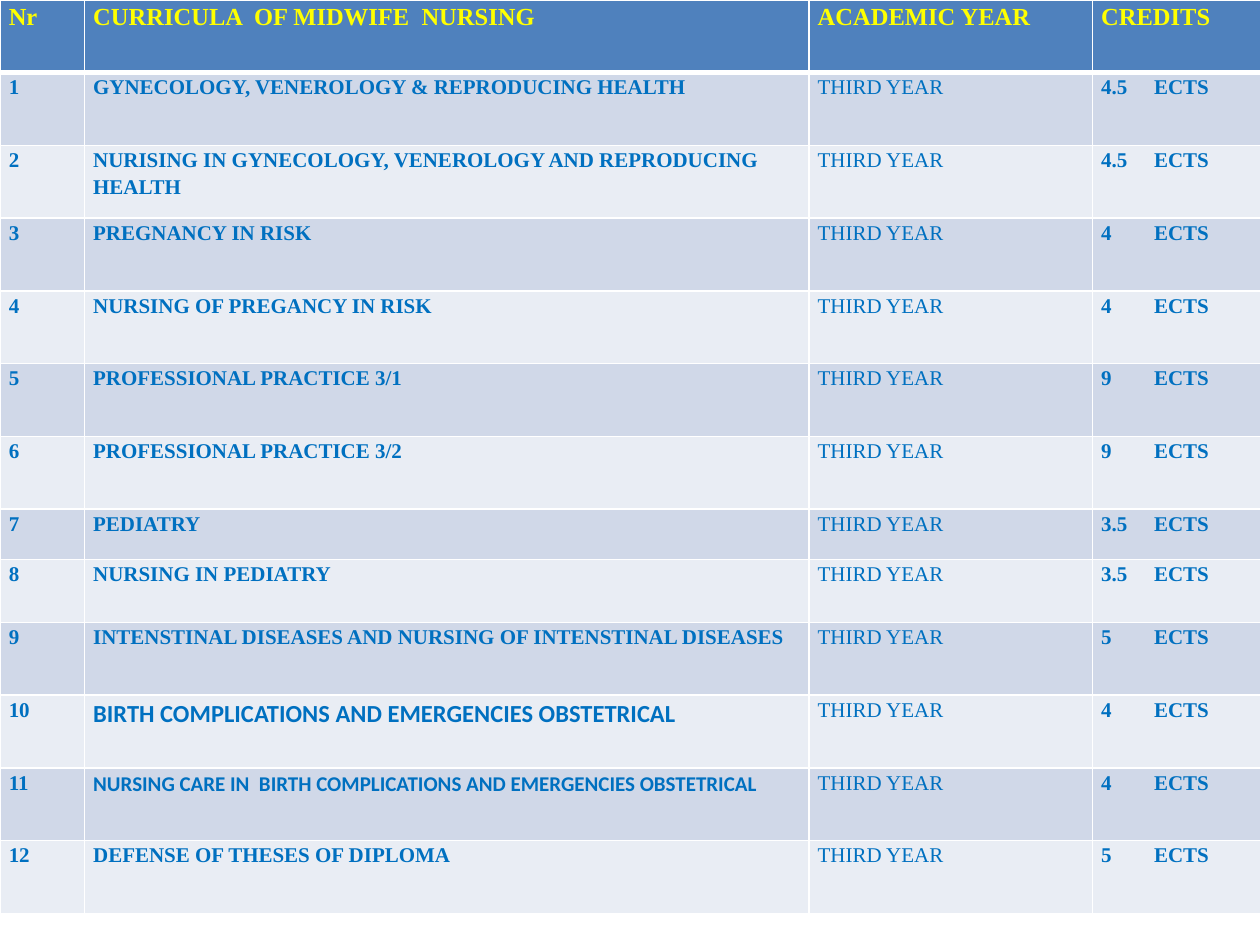
from lxml import etree
from pptx import Presentation
from pptx import util as u
from pptx.dml.color import RGBColor
from pptx.enum import text
from pptx.oxml import ns

COLORS = {
    "header": "4F81BD", "odd": "D0D8E8", "even": "E9EDF4",
    "heading": "FFFF00", "body": "0070C0", "border": "FFFFFF",
}
SERIF, SANS = "Times New Roman", "Calibri"
HEADINGS = ["Nr", "CURRICULA  OF MIDWIFE  NURSING", "ACADEMIC YEAR", "CREDITS"]
COURSES = [
    ("GYNECOLOGY, VENEROLOGY & REPRODUCING HEALTH", "4.5"),
    ("NURISING IN GYNECOLOGY, VENEROLOGY AND REPRODUCING HEALTH", "4.5"),
    ("PREGNANCY IN RISK", "4"),
    ("NURSING OF PREGANCY IN RISK", "4"),
    ("PROFESSIONAL PRACTICE 3/1", "9"),
    ("PROFESSIONAL PRACTICE 3/2", "9"),
    ("PEDIATRY", "3.5"),
    ("NURSING IN PEDIATRY", "3.5"),
    ("INTENSTINAL DISEASES AND NURSING OF INTENSTINAL DISEASES", "5"),
    ("BIRTH COMPLICATIONS AND EMERGENCIES OBSTETRICAL", "4"),
    ("NURSING CARE IN  BIRTH COMPLICATIONS AND EMERGENCIES OBSTETRICAL", "4"),
    ("DEFENSE OF THESES OF DIPLOMA", "5"),
]
COURSE_FONTS = {10: (SANS, 14), 11: (SANS, 12)}
COLUMN_WIDTHS = [0.67, 5.75, 2.25, 1.5]
TABLE_HEIGHT = 7.25
SHORT_ROWS = {7: 0.4, 8: 0.5}
COURSE_COLUMN, YEAR_COLUMN, CREDITS_COLUMN = 1, 2, 3
UNIT_TAB = 0.42


class CurriculumSlide:
    def __init__(self, deck):
        self.slide = deck.slides.add_slide(deck.slide_layouts[6])

    def table(self, rows, widths, heights):
        frame = self.slide.shapes.add_table(
            len(rows), len(widths), 0, 0,
            u.Inches(sum(widths)), u.Inches(sum(heights)))
        grid = frame.table
        for column, width in zip(grid.columns, widths):
            column.width = u.Inches(width)
        for row, height in zip(grid.rows, heights):
            row.height = u.Inches(height)
        for r, values in enumerate(rows):
            for c, value in enumerate(values):
                self.cell(grid.cell(r, c), r, c, value)

    def cell(self, cell, r, c, value):
        is_header = r == 0
        self.borders(cell, top=3 if r == 1 else 1, bottom=3 if is_header else 1)
        band = "header" if is_header else "odd" if r % 2 else "even"
        cell.fill.solid()
        cell.fill.fore_color.rgb = RGBColor.from_string(COLORS[band])
        cell.margin_left = cell.margin_right = u.Inches(0.07)
        cell.margin_top = cell.margin_bottom = 0
        cell.vertical_anchor = text.MSO_ANCHOR.TOP

        paragraph = cell.text_frame.paragraphs[0]
        paragraph.text = value
        paragraph.line_spacing = 1.15
        paragraph.alignment = text.PP_ALIGN.LEFT
        if c == CREDITS_COLUMN and not is_header:
            self.tab_stop(paragraph, UNIT_TAB)

        name, size = SERIF, 14 if is_header else 12
        if c == COURSE_COLUMN:
            name, size = COURSE_FONTS.get(r, (name, size))
        for run in paragraph.runs:
            run.font.name = name
            run.font.size = u.Pt(size)
            run.font.bold = is_header or c != YEAR_COLUMN
            run.font.color.rgb = RGBColor.from_string(
                COLORS["heading" if is_header else "body"])

    def borders(self, cell, top, bottom):
        properties = cell._tc.get_or_add_tcPr()
        for side, width in (("L", 1), ("R", 1), ("T", top), ("B", bottom)):
            line = etree.SubElement(
                properties, ns.qn(f"a:ln{side}"), w=str(u.Pt(width)))
            fill = etree.SubElement(line, ns.qn("a:solidFill"))
            etree.SubElement(fill, ns.qn("a:srgbClr"), val=COLORS["border"])

    def tab_stop(self, paragraph, position):
        stops = etree.SubElement(
            paragraph._p.get_or_add_pPr(), ns.qn("a:tabLst"))
        etree.SubElement(
            stops, ns.qn("a:tab"), pos=str(u.Inches(position)), algn="l")


def main():
    deck = Presentation()
    deck.slide_width, deck.slide_height = u.Inches(10), u.Inches(7.5)
    rows = [HEADINGS] + [
        [str(number), course, "THIRD YEAR", f"{credits}\tECTS"]
        for number, (course, credits) in enumerate(COURSES, 1)
    ]
    full_row = ((TABLE_HEIGHT - sum(SHORT_ROWS.values()))
                / (len(rows) - len(SHORT_ROWS)))
    heights = [SHORT_ROWS.get(r, full_row) for r in range(len(rows))]
    CurriculumSlide(deck).table(rows, COLUMN_WIDTHS, heights)
    deck.save("out.pptx")


if __name__ == "__main__":
    main()
